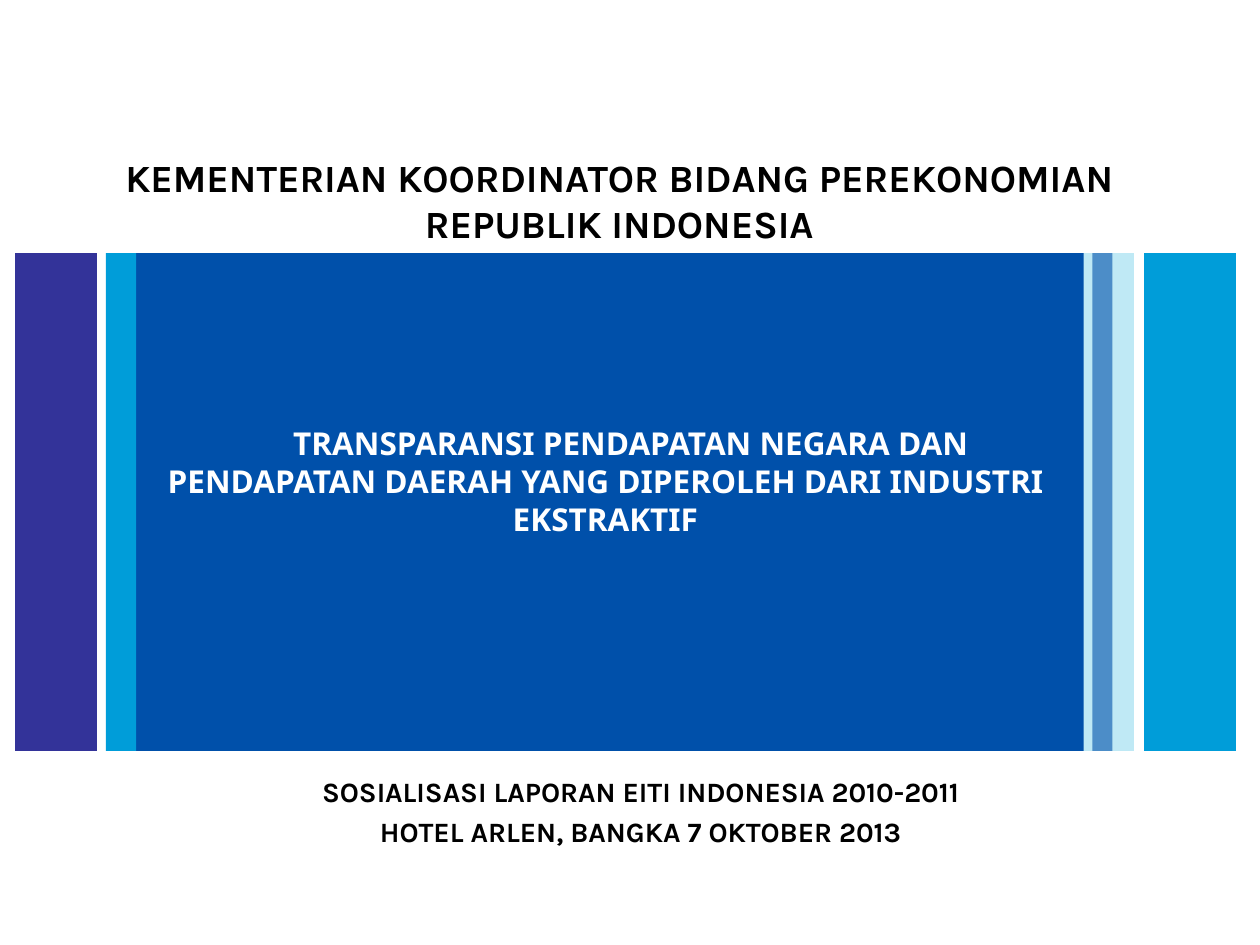
from dataclasses import dataclass

from lxml.etree import SubElement
from pptx import Presentation
from pptx.dml.color import RGBColor as RGB
from pptx.enum.shapes import MSO_SHAPE as SHAPE
from pptx.enum.text import PP_ALIGN as ALIGN
from pptx.oxml.ns import qn
from pptx.util import Pt

PX = 9144


@dataclass(frozen=True)
class Theme:
    """Colours, fonts and type sizes of the slide."""
    blue: str = "0050AA"
    cyan: str = "009DD9"
    pale: str = "BFE9F5"
    indigo: str = "333399"
    black: str = "000000"
    white: str = "FFFFFF"
    heading_font: str = "Karla"
    title_font: str = "Noto Sans"
    heading_size: int = 22
    title_size: int = 18
    event_size: int = 16


T = Theme()


def add_bar(slide, left, top, width, height, color, alpha=None):
    """Add a plain filled rectangle, optionally translucent."""
    sp = slide.shapes.add_shape(
        SHAPE.RECTANGLE, left * PX, top * PX, width * PX, height * PX)
    sp.shadow.inherit = False
    sp.line.fill.background()
    sp.fill.solid()
    sp.fill.fore_color.rgb = RGB.from_string(color)
    if alpha:
        clr = sp._element.spPr.find(f"{qn('a:solidFill')}/{qn('a:srgbClr')}")
        SubElement(clr, qn("a:alpha"), val=str(alpha * 1000))


def add_text(slide, box, lines, *, font, size, color, inset=5,
             before=0, leading=None, indent=0):
    """Add centred bold paragraphs in a wrapping text box."""
    left, top, width, height = (v * PX for v in box)
    tf = slide.shapes.add_textbox(left, top, width, height).text_frame
    tf.word_wrap = True
    tf.margin_top = inset * PX
    for i, line in enumerate(lines):
        p = tf.paragraphs[0] if i == 0 else tf.add_paragraph()
        p.alignment = ALIGN.CENTER
        p.space_before = Pt(before)
        if leading:
            p.line_spacing = Pt(leading)
        if indent:
            p._p.get_or_add_pPr().set("indent", str(indent * PX))
        r = p.add_run()
        r.text = line
        r.font.name = font
        r.font.size = Pt(size)
        r.font.bold = True
        r.font.color.rgb = RGB.from_string(color)


def add_heading(slide, box):
    """Place the ministry name."""
    add_text(slide, box,
             ["KEMENTERIAN KOORDINATOR BIDANG PEREKONOMIAN",
              "REPUBLIK INDONESIA"],
             font=T.heading_font, size=T.heading_size, color=T.black)


def add_banner(slide, box):
    """Place the coloured bars and the title over them."""
    left, top, width, height = box
    bars = [(791, 97, T.pale, None), (89, 759, T.blue, None),
            (855, 16, T.blue, 60), (72, 24, T.cyan, None),
            (0, 65, T.indigo, None), (width - 73, 73, T.cyan, None)]
    for x, bar_width, color, alpha in bars:
        add_bar(slide, left + x, top, bar_width, height, color, alpha)
    add_text(slide, (left + 89, top + 95, 759, 262),
             ["TRANSPARANSI PENDAPATAN NEGARA DAN PENDAPATAN DAERAH "
              "YANG DIPEROLEH DARI INDUSTRI EKSTRAKTIF"],
             font=T.title_font, size=T.title_size, color=T.white,
             inset=40, leading=21.7, indent=40)


def add_event(slide, box):
    """Place the event name, venue and date."""
    add_text(slide, box,
             ["SOSIALISASI LAPORAN EITI INDONESIA 2010-2011",
              "HOTEL ARLEN, BANGKA 7 OKTOBER 2013"],
             font=T.heading_font, size=T.event_size, color=T.black,
             inset=43, before=3.5)


def main():
    """Build and save the slide."""
    prs = Presentation()
    prs.slide_width, prs.slide_height = 1000 * PX, 750 * PX
    s = prs.slides.add_slide(prs.slide_layouts[6])
    add_banner(s, (12, 201, 969, 395))
    add_event(s, (50, 572, 917, 108))
    add_heading(s, (33, 117, 917, 84))
    prs.save("out.pptx")


if __name__ == "__main__":
    main()
